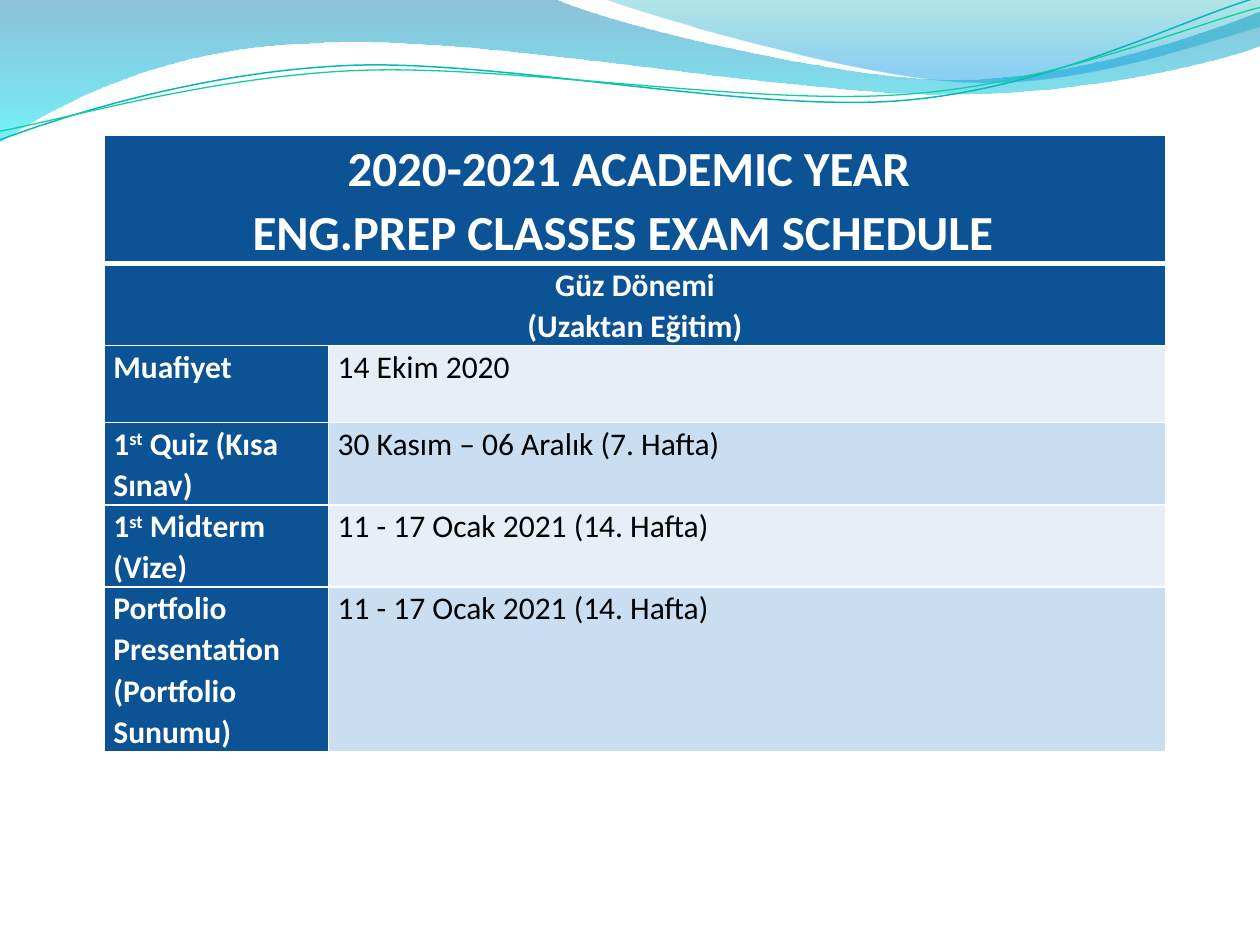
from math import cos, radians, sin

from lxml import etree
from pptx import Presentation
from pptx.dml.color import RGBColor
from pptx.enum.text import PP_ALIGN
from pptx.oxml import parse_xml
from pptx.oxml.ns import nsdecls, qn
from pptx.util import Pt

COLORS = {
    "navy": "0B5394", "light": "E6EFF8", "mid": "CADEF1", "white": "FFFFFF", "black": "000000",
    "blue": "0079AD", "cyan": "00E9F7", "teal": "00ABB4", "sky": "0099E4",
    "aqua": "09B6BE", "green": "10CF9B",
}


def add_curve(s, start, segments, closed):
    points = [start]
    for seg in segments:
        points += zip(seg[::2], seg[1::2])
    points = [(Pt(x), Pt(y)) for x, y in points]
    builder = s.shapes.build_freeform(*points[0])
    builder.add_line_segments(points[1:], close=closed)
    sp = builder.convert_to_shape()
    sp.shadow.inherit = False
    sp.fill.background()
    nodes = iter(list(sp._element.iter(qn("a:lnTo"))))
    for seg in segments:
        if len(seg) == 2:
            next(nodes)
            continue
        bezier = etree.Element(qn("a:cubicBezTo"))
        first = next(nodes)
        first.addprevious(bezier)
        for node in (first, next(nodes), next(nodes)):
            bezier.append(node[0])
            node.getparent().remove(node)
    return sp


def add_run(p, text, size, color, bold, raised=False):
    r = p.add_run()
    r.text = text
    r.font.name = "Calibri"
    r.font.size = Pt(size)
    r.font.bold = bold
    r.font.color.rgb = RGBColor.from_string(COLORS[color])
    if raised:
        r.font._element.set("baseline", "30000")


prs = Presentation()
prs.slide_width, prs.slide_height = Pt(720), Pt(540)
s = prs.slides.add_slide(prs.slide_layouts[6])

waves = [
    ((0, 0), [(316.8, -0.7), (342.7, 12.2, 478, 45.4, 545.8, 45.4),
              (614.2, 45.4, 689.8, 18.7, 720, 6.5), (720.7, 25.9),
              (707.8, 31.7, 626.4, 54.7, 537.1, 54), (447.8, 54, 275, 20.2, 185, 24.5),
              (92.9, 25.9, 33.1, 59.8, -0.7, 81.4), (0, 0)],
     [(0, "blue", 45), (100, "cyan", 55)]),
    ((344.9, -0.7), [(366.5, 7.9, 491, 44.6, 553.7, 46.8),
                     (616.3, 49.7, 691.9, 23, 720, 15.1), (720, 0), (344.9, -0.7)],
     [(0, "teal", 30), (80, "sky", 45), (100, "sky", 45)]),
]
for start, segments, stops in waves:
    sp = add_curve(s, start, segments, True)
    sp.line.fill.background()
    gradient = parse_xml(f'<a:gradFill {nsdecls("a")} rotWithShape="1"><a:gsLst/>'
                         '<a:lin ang="5400000" scaled="0"/></a:gradFill>')
    for pos, color, opacity in stops:
        stop = etree.SubElement(gradient[0], qn("a:gs"), pos=str(pos * 1000))
        rgb = etree.SubElement(stop, qn("a:srgbClr"), val=COLORS[color])
        etree.SubElement(rgb, qn("a:alpha"), val=str(opacity * 1000))
    sp_pr = sp._element.spPr
    sp_pr.replace(sp_pr.find(qn("a:noFill")), gradient)

tilt = 2.7
center_x, center_y = 359.5, 41.5
strands = [
    ([(0, 79.9), (34.6, 67, 113.8, 41, 199.4, 37.4), (284.4, 33.8, 427, 64.1, 513.4, 57.6),
      (599.8, 51.1, 675.4, 10.8, 718.6, -1.4)], "aqua", 0.85),
    ([(0, 74.9), (33.8, 69.1, 118.1, 43.9, 203.8, 40.3), (290.2, 36.7, 429.8, 60.5, 516.2, 54),
      (601.9, 48.2, 677.5, 15.1, 720, 4.3)], "green", 0.75),
]
cos_t, sin_t = cos(radians(tilt)), sin(radians(tilt))
for segments, color, width in strands:
    level = []
    for seg in segments:
        turned = []
        for x, y in zip(seg[::2], seg[1::2]):
            dx, dy = x - center_x, y - center_y
            turned += [center_x + dx * cos_t - dy * sin_t, center_y + dx * sin_t + dy * cos_t]
        level.append(turned)
    sp = add_curve(s, level[0], level[1:], False)
    sp.rotation = 360 - tilt
    sp.line.color.rgb = RGBColor.from_string(COLORS[color])
    sp.line.width = Pt(width)

headers = [
    ([("2020-2021 ACADEMIC YEAR", 7), ("ENG.PREP CLASSES EXAM SCHEDULE", 14)], 28),
    ([("Güz Dönemi", 0), ("(Uzaktan Eğitim)", 0)], 18),
]
exams = [
    (["Muafiyet"], "14 Ekim 2020"),
    (["1", "st", " Quiz (Kısa Sınav)"], "30 Kasım – 06 Aralık (7. Hafta)"),
    (["1", "st", " Midterm (Vize)"], "11 - 17 Ocak 2021 (14. Hafta)"),
    (["Portfolio Presentation (Portfolio Sunumu)"], "11 - 17 Ocak 2021 (14. Hafta)"),
]
col_widths = [128.2, 478.3]
row_heights = [71.3, 41, 43.9, 46, 43.9, 46]
table = s.shapes.add_table(len(row_heights), len(col_widths), Pt(59.6), Pt(77.3),
                           Pt(sum(col_widths)), Pt(sum(row_heights))).table
for column, width in zip(table.columns, col_widths):
    column.width = Pt(width)
for row, height in zip(table.rows, row_heights):
    row.height = Pt(height)

for i, (lines, size) in enumerate(headers):
    cell = table.cell(i, 0)
    cell.merge(table.cell(i, 1))
    tf = cell.text_frame
    for j, (line, right_indent) in enumerate(lines):
        p = tf.add_paragraph() if j else tf.paragraphs[0]
        p.alignment = PP_ALIGN.CENTER
        p._p.get_or_add_pPr().set("marR", str(Pt(right_indent)))
        add_run(p, line, size, "white", True)

for i, (label, dates) in enumerate(exams, len(headers)):
    p = table.cell(i, 0).text_frame.paragraphs[0]
    for text in label:
        add_run(p, text, 18, "white", True, text == "st")
    add_run(table.cell(i, 1).text_frame.paragraphs[0], dates, 18, "black", False)

for i, row in enumerate(table.rows):
    for j, cell in enumerate(row.cells):
        cell.margin_left = cell.margin_right = Pt(5.2)
        cell.margin_top = cell.margin_bottom = 0
        for p in cell.text_frame.paragraphs:
            p.line_spacing = 1.07
        fill = "navy" if j == 0 or i < len(headers) else ("light", "mid")[i % 2]
        cell.fill.solid()
        cell.fill.fore_color.rgb = RGBColor.from_string(COLORS[fill])
        for k, side in enumerate("LRTB"):
            thick = (i, side) in [(0, "B"), (1, "T")]
            border = parse_xml(f'<a:ln{side} {nsdecls("a")} w="{Pt(3 if thick else 1)}"><a:solidFill>'
                               f'<a:srgbClr val="{COLORS["white"]}"/></a:solidFill></a:ln{side}>')
            cell._tc.tcPr.insert(k, border)

prs.save("out.pptx")
